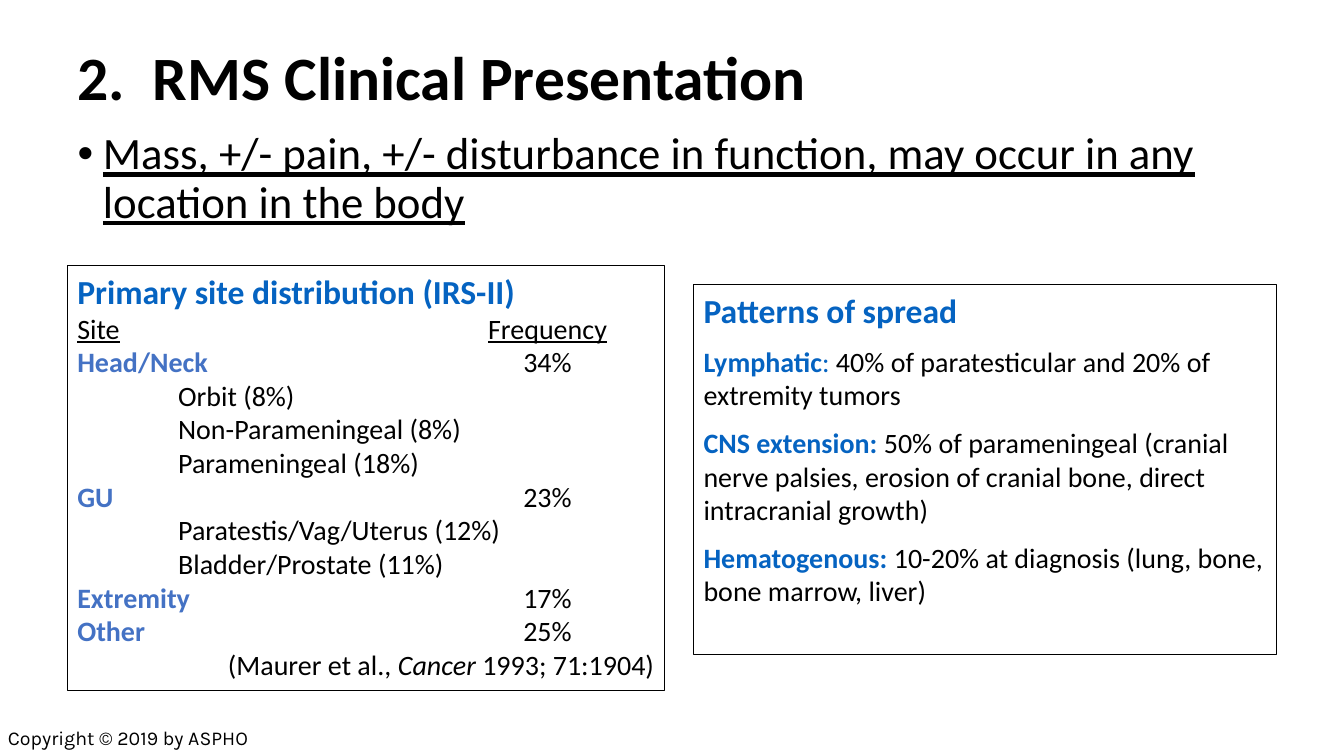
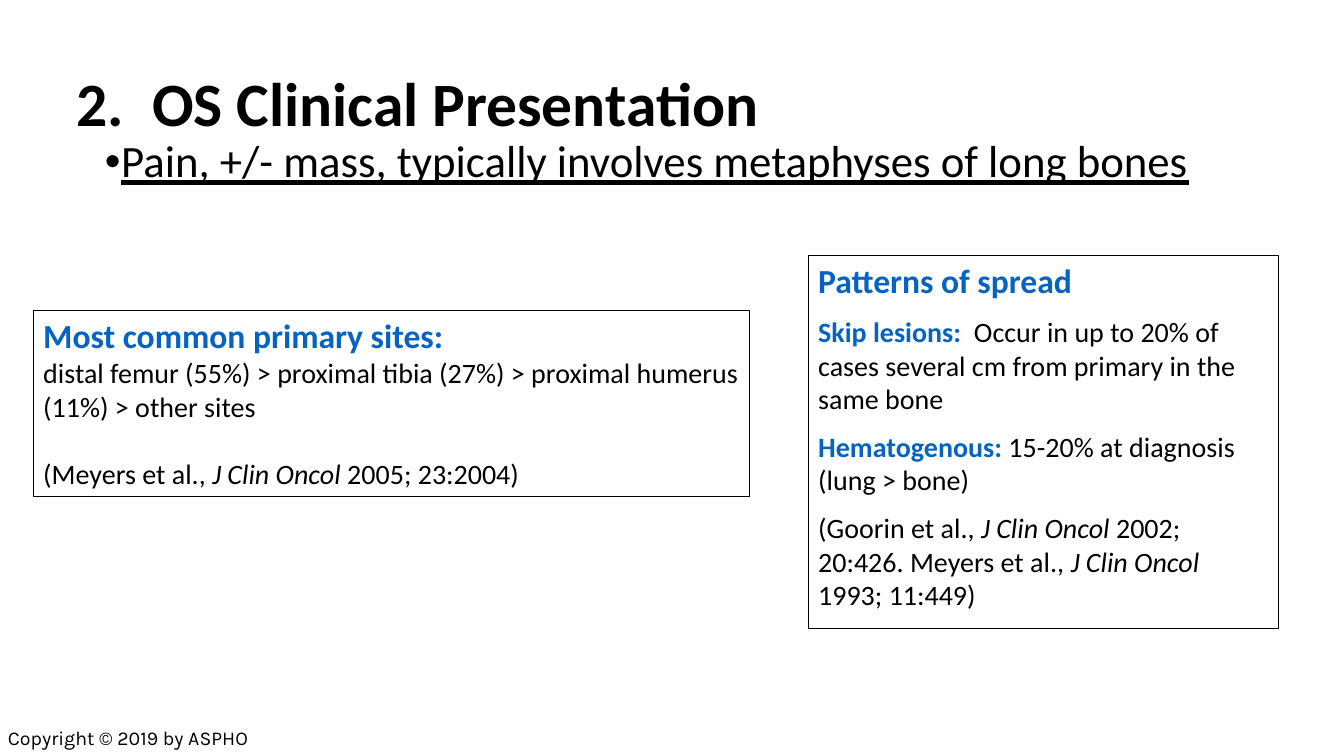
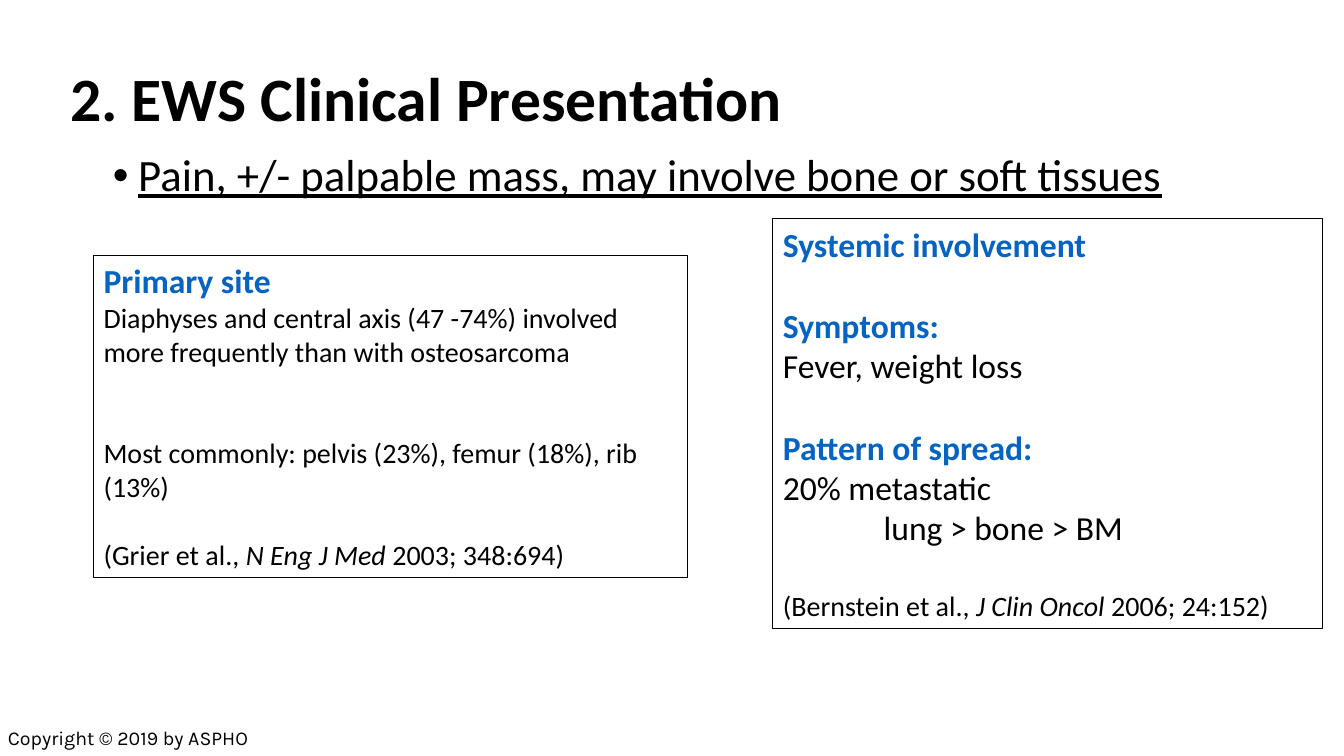
from lxml import etree
from pptx import Presentation
from pptx.dml.color import RGBColor
from pptx.enum.shapes import MSO_SHAPE
from pptx.enum.text import MSO_ANCHOR, MSO_AUTO_SIZE, PP_ALIGN
from pptx.oxml.ns import qn
from pptx.util import Cm, Pt

RECTANGLE = MSO_SHAPE.RECTANGLE
TOP, MIDDLE = MSO_ANCHOR.TOP, MSO_ANCHOR.MIDDLE
LEFT, RIGHT = PP_ALIGN.LEFT, PP_ALIGN.RIGHT
FIXED = MSO_AUTO_SIZE.NONE

BLACK, BLUE, SITE_BLUE = "000000", "0563C1", "4472C4"
COPYRIGHT = "Copyright © 2019 by ASPHO"

BASE = {"name": "Calibri", "size": Pt(20), "bold": False, "color": BLACK}
TITLE = {"size": Pt(44), "bold": True}
LEAD = {"size": Pt(32), "underline": True}
HEADING = {"size": Pt(24), "bold": True, "color": BLUE}
LARGE = {"size": Pt(24)}
LABEL = {"bold": True, "color": BLUE}
COLON = {"color": BLUE}
SITE = {"bold": True, "color": SITE_BLUE}
UNDERLINED = {"underline": True}
JOURNAL = {"italic": True}
FOOTER = {"name": "Karla", "size": Pt(14)}

LINE, LARGE_LINE = Pt(24.4), Pt(29.3)
SPREAD_GAP = {"space_before": Pt(10)}
SUBSITE_INDENT = Cm(2.54)
FREQUENCY_CENTRE = Cm(11.85)


def color(hex_text):
    return RGBColor.from_string(hex_text)


def add_span(para, text, style):
    span = para.add_run()
    span.text = text
    for name, value in {**BASE, **style}.items():
        if name == "color":
            span.font.color.rgb = color(value)
        else:
            setattr(span.font, name, value)


def format_para(para, layout):
    """Apply indents and a centred tab, then the public paragraph attributes."""
    settings = dict(layout)
    properties = para._p.get_or_add_pPr()
    for name in ("marL", "indent"):
        if name in settings:
            properties.set(name, str(int(settings.pop(name))))
    if "centre_tab" in settings:
        tabs = etree.SubElement(properties, qn("a:tabLst"))
        etree.SubElement(tabs, qn("a:tab"), pos=str(int(settings.pop("centre_tab"))), algn="ctr")
    for name, value in {"alignment": LEFT, **settings}.items():
        setattr(para, name, value)


def write(frame, paras, anchor=TOP):
    """Fill a frame from (spans, layout) pairs; a span is a string or (text, style)."""
    for name, value in {"word_wrap": True, "auto_size": FIXED, "vertical_anchor": anchor}.items():
        setattr(frame, name, value)
    for number, (spans, layout) in enumerate(paras):
        para = frame.add_paragraph() if number else frame.paragraphs[0]
        format_para(para, layout)
        for span in spans:
            add_span(para, *((span, {}) if isinstance(span, str) else span))


def line(*spans, **layout):
    return spans, layout


def place(shape, box):
    for name, value in zip(("left", "top", "width", "height"), box):
        setattr(shape, name, Cm(value))


def add_panel(slide, box, paras):
    panel = slide.shapes.add_shape(RECTANGLE, *map(Cm, box))
    panel.shadow.inherit = False
    panel.fill.background()
    panel.line.color.rgb = color(BLACK)
    panel.line.width = Pt(0.75)
    write(panel.text_frame, paras)


def add_footer(slide):
    footer = slide.shapes.add_textbox(Cm(0), Cm(18.16), Cm(8.6), Cm(0.86))
    footer.text_frame.margin_left = Cm(0.2)
    write(footer.text_frame, [line((COPYRIGHT, FOOTER))])


def add_presentation_slide(deck, title, title_box, lead, lead_box, panels,
                           lead_indent=0.64, hanging=0.64):
    slide = deck.slides.add_slide(deck.slide_layouts[1])
    heading, body = slide.placeholders
    place(heading, title_box)
    write(heading.text_frame, [line((title, TITLE), line_spacing=0.9)], MIDDLE)
    place(body, lead_box)
    write(body.text_frame, [line((lead, LEAD), line_spacing=0.9, space_before=Pt(0),
                                 marL=Cm(lead_indent), indent=Cm(-hanging))])
    for box, paras in panels:
        add_panel(slide, box, paras)
    add_footer(slide)


def site_row(site, frequency, style=SITE, frequency_style=BASE):
    return line((site, style), "\t", (frequency, frequency_style), centre_tab=FREQUENCY_CENTRE)


def subsites(*names):
    return [line(name, marL=SUBSITE_INDENT, indent=0) for name in names]


def citation(before, journal, after, **layout):
    return line(before, (journal, JOURNAL), after, **layout)


def spread(label, text):
    return line((label, LABEL), text, **SPREAD_GAP)


def heading_line(text, **layout):
    return line((text, HEADING), **layout)


def add_rms(deck):
    sites = [
        heading_line("Primary site distribution (IRS-II)"),
        site_row("Site", "Frequency", UNDERLINED, UNDERLINED),
        site_row("Head/Neck", "34%"),
        *subsites("Orbit (8%)", "Non-Parameningeal (8%)", "Parameningeal (18%)"),
        site_row("GU", "23%"),
        *subsites("Paratestis/Vag/Uterus (12%)", "Bladder/Prostate (11%)"),
        site_row("Extremity", "17%"),
        site_row("Other", "25%"),
        citation("(Maurer et al., ", "Cancer ", "1993; 71:1904)", alignment=RIGHT),
    ]
    patterns = [
        heading_line("Patterns of spread"),
        line(("Lymphatic", LABEL), (":", COLON),
             " 40% of paratesticular and 20% of extremity tumors", **SPREAD_GAP),
        spread("CNS extension:", " 50% of parameningeal (cranial nerve palsies, "
               "erosion of cranial bone, direct intracranial growth)"),
        spread("Hematogenous:", " 10-20% at diagnosis (lung, bone, bone marrow, liver)"),
    ]
    add_presentation_slide(
        deck, "2.  RMS Clinical Presentation", (1.7, 0.43, 30.48, 3.18),
        "Mass, +/- pain, +/- disturbance in function, may occur in any location in the body",
        (1.7, 3.18, 30.48, 12.57),
        [((17.48, 7.18, 14.68, 9.32), patterns), ((1.7, 6.7, 15.04, 10.69), sites)])


def add_os(deck):
    sites = [
        heading_line("Most common primary sites:"),
        line("distal femur (55%) > proximal tibia (27%) > proximal humerus (11%) > other sites"),
        citation("(Meyers et al., ", "J Clin Oncol", " 2005; 23:2004)", space_before=LINE),
    ]
    patterns = [
        heading_line("Patterns of spread"),
        spread("Skip lesions:", "  Occur in up to 20% of cases several cm from primary "
               "in the same bone"),
        spread("Hematogenous:", " 15-20% at diagnosis (lung > bone)"),
        line("(Goorin et al., ", ("J Clin Oncol", JOURNAL), " 2002; 20:426. Meyers et al., ",
             ("J Clin Oncol", JOURNAL), " 1993; 11:449)", **SPREAD_GAP),
    ]
    add_presentation_slide(
        deck, "2.  OS Clinical Presentation", (1.68, 0.84, 29.21, 3.68),
        "Pain, +/- mass, typically involves metaphyses of long bones",
        (1.12, 3.38, 30.48, 12.57),
        [((0.84, 7.82, 18.06, 4.7), sites), ((20.37, 6.43, 11.86, 9.4), patterns)],
        lead_indent=1.68, hanging=0.41)


def add_ews(deck):
    sites = [
        heading_line("Primary site"),
        line("Diaphyses and central axis (47 -74%) involved more frequently "
             "than with osteosarcoma"),
        line("Most commonly: pelvis (23%), femur (18%), rib (13%)", space_before=2 * LINE),
        citation("(Grier et al., ", "N Eng J Med", " 2003; 348:694)", space_before=LINE),
    ]
    involvement = [
        heading_line("Systemic involvement"),
        heading_line("Symptoms:", space_before=LARGE_LINE),
        line(("Fever, weight loss", LARGE)),
        heading_line("Pattern of spread:", space_before=LARGE_LINE),
        line(("20% metastatic", LARGE)),
        line(("lung > bone > BM", LARGE), marL=SUBSITE_INDENT, indent=0),
        citation("(Bernstein et al., ", "J Clin Oncol ", "2006; 24:152)",
                 space_before=LARGE_LINE),
    ]
    add_presentation_slide(
        deck, "2. EWS Clinical Presentation", (1.52, 0.71, 29.21, 3.68),
        "Pain, +/- palpable mass, may involve bone or soft tissues",
        (2.59, 3.73, 30.48, 12.57),
        [((2.36, 6.43, 14.96, 8.13), sites), ((19.48, 5.51, 13.84, 10.34), involvement)])


def main():
    deck = Presentation()
    deck.slide_width, deck.slide_height = Cm(33.87), Cm(19.05)
    for add_slide in (add_rms, add_os, add_ews):
        add_slide(deck)
    deck.save("out.pptx")


if __name__ == "__main__":
    main()
